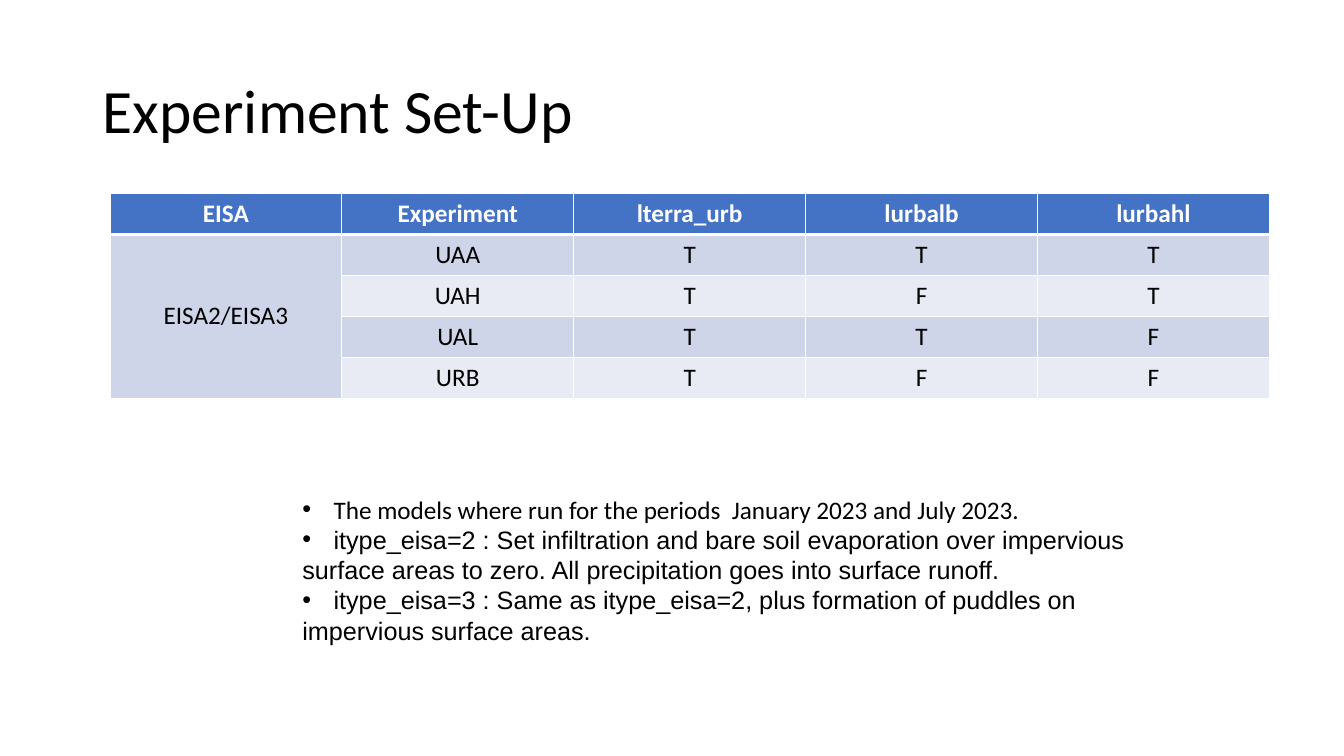
from lxml import etree
from pptx import Presentation
from pptx.dml.color import RGBColor
from pptx.enum.text import MSO_ANCHOR, MSO_AUTO_SIZE, PP_ALIGN
from pptx.oxml.ns import qn
from pptx.util import Inches, Pt

CENTER, LEFT = PP_ALIGN.CENTER, PP_ALIGN.LEFT
MIDDLE, TOP = MSO_ANCHOR.MIDDLE, MSO_ANCHOR.TOP
NO_FIT = MSO_AUTO_SIZE.NONE
GROW = MSO_AUTO_SIZE.SHAPE_TO_FIT_TEXT

TITLE = "Experiment Set-Up"
HEADER = ["EISA", "Experiment", "lterra_urb", "lurbalb", "lurbahl"]
GROUP = "EISA2/EISA3"
EXPERIMENTS = [
    ("UAA", "T", "T", "T"),
    ("UAH", "T", "F", "T"),
    ("UAL", "T", "T", "F"),
    ("URB", "T", "F", "F"),
]
# text, font, hanging indent; a tab sets the gap where wrapped lines return to the bullet
NOTES = [
    ("The models where run for the periods  January 2023 and July 2023.", "Calibri", True),
    ("\titype_eisa=2 : Set infiltration and bare soil evaporation over impervious "
     "surface areas to zero. All precipitation goes into surface runoff.", "Arial", False),
    ("\titype_eisa=3 : Same as itype_eisa=2, plus formation of puddles on "
     "impervious surface areas.", "Arial", False),
]

BLACK, WHITE, BLUE = "000000", "FFFFFF", "4472C4"
BANDS = ["CFD5E9", "E8EBF4"]
TITLE_BOX = (0.92, 0.4, 11.5, 1.45)
TABLE_BOX = (1.09, 1.92, 11.5, 2.03)
NOTES_BOX = (2.9, 4.85, 8.79, 1.62)
THIN, THICK = 0.96, 3
INDENT = 0.31


def rgb(color):
    return RGBColor.from_string(color)


def inches(box):
    return [Inches(v) for v in box]


def write(p, text, size=18, font="Calibri", color=BLACK, bold=False, align=LEFT):
    p.alignment = align
    r = p.add_run()
    r.text = text
    r.font.size, r.font.name, r.font.bold = Pt(size), font, bold
    r.font.color.rgb = rgb(color)


def add_bullet(p, hanging):
    pPr = p._p.get_or_add_pPr()
    indent = Inches(INDENT)
    pPr.set("marL", str(indent if hanging else 0))
    pPr.set("indent", str(-indent if hanging else 0))
    etree.SubElement(etree.SubElement(pPr, qn("a:buClr")), qn("a:srgbClr"), val=BLACK)
    etree.SubElement(pPr, qn("a:buFont"), typeface="Arial")
    etree.SubElement(pPr, qn("a:buChar"), char="•")
    if not hanging:
        tabs = etree.SubElement(pPr, qn("a:tabLst"))
        etree.SubElement(tabs, qn("a:tab"), pos=str(indent), algn="l")


def set_borders(cell, top, bottom):
    tcPr = cell._tc.get_or_add_tcPr()
    for i, (side, width) in enumerate(zip("LRTB", (THIN, THIN, top, bottom))):
        ln = etree.Element(qn(f"a:ln{side}"), w=str(Pt(width)))
        fill = etree.SubElement(ln, qn("a:solidFill"))
        etree.SubElement(fill, qn("a:srgbClr"), val=WHITE)
        tcPr.insert(i, ln)


def add_title(s):
    sp = s.shapes.title
    sp.left, sp.top, sp.width, sp.height = inches(TITLE_BOX)
    tf = sp.text_frame
    tf.auto_size, tf.vertical_anchor = NO_FIT, MIDDLE
    p = tf.paragraphs[0]
    p.line_spacing = 0.9
    write(p, TITLE, size=44)


def add_experiments(s):
    rows = [HEADER] + [("", *row) for row in EXPERIMENTS]
    table = s.shapes.add_table(len(rows), len(HEADER), *inches(TABLE_BOX)).table
    for r, row in enumerate(rows):
        table.rows[r].height = Inches(TABLE_BOX[3] / len(rows))
        for c, text in enumerate(row):
            cell = table.cell(r, c)
            head = r == 0
            group = c == 0 and not head
            fill = BLUE if head else BANDS[0 if group else (r - 1) % 2]
            cell.fill.solid()
            cell.fill.fore_color.rgb = rgb(fill)
            cell.vertical_anchor = MIDDLE if group else TOP
            set_borders(cell, THICK if r == 1 else THIN, THICK if head else THIN)
            if text:
                write(cell.text_frame.paragraphs[0], text, bold=head,
                      color=WHITE if head else BLACK, align=CENTER)
    group_cell = table.cell(1, 0)
    group_cell.merge(table.cell(len(EXPERIMENTS), 0))
    write(group_cell.text_frame.paragraphs[0], GROUP, align=CENTER)


def add_notes(s):
    tf = s.shapes.add_textbox(*inches(NOTES_BOX)).text_frame
    tf.word_wrap, tf.auto_size = True, GROW
    for i, (text, font, hanging) in enumerate(NOTES):
        p = tf.add_paragraph() if i else tf.paragraphs[0]
        write(p, text, font=font)
        add_bullet(p, hanging)


def main():
    prs = Presentation()
    prs.slide_width, prs.slide_height = Inches(13.33), Inches(7.5)
    s = prs.slides.add_slide(prs.slide_layouts[5])
    add_title(s)
    add_experiments(s)
    add_notes(s)
    prs.save("out.pptx")


if __name__ == "__main__":
    main()
